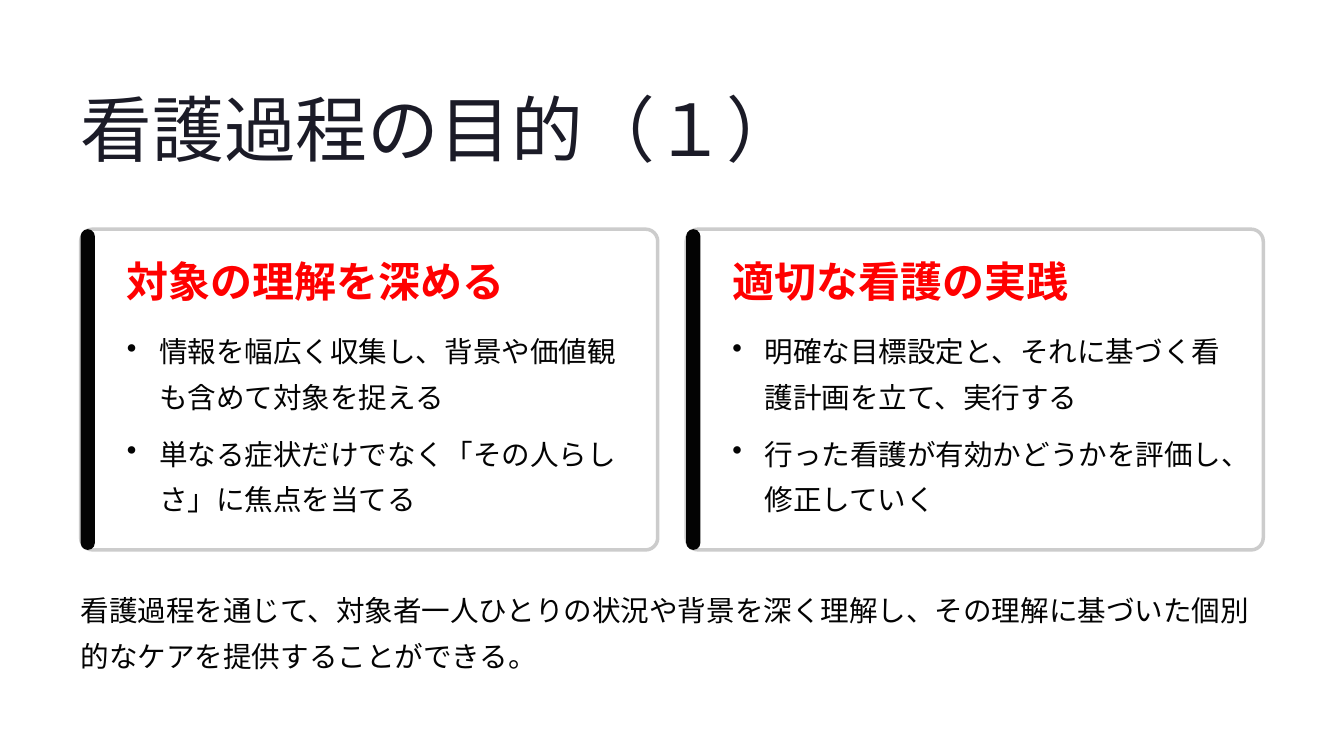
from lxml import etree
from pptx import Presentation
from pptx import util as u
from pptx.dml.color import RGBColor
from pptx.enum import lang, shapes, text
from pptx.oxml.ns import qn

COLORS = {"title": "1B1B27", "heading": "FF0000", "ink": "030303",
          "card": "FFFFFF", "border": "CCCCCC"}
FORMATS = {
    "title": {"size": u.Pt(61.5), "name": "Inter", "bold": False},
    "heading": {"size": u.Pt(36), "name": "Inter", "bold": True},
    "ink": {"size": u.Pt(24.5), "name": "Cabin", "bold": False},
}
LEADING = {"title": 77, "heading": 38.5, "ink": 39}
INDENT = u.Cm(0.97)
CARDS = [
    ("対象の理解を深める",
     ["情報を幅広く収集し、背景や価値観も含めて対象を捉える",
      "単なる症状だけでなく「その人らしさ」に焦点を当てる"]),
    ("適切な看護の実践",
     ["明確な目標設定と、それに基づく看護計画を立て、実行する",
      "行った看護が有効かどうかを評価し、修正していく"]),
]
SUMMARY = ("看護過程を通じて、対象者一人ひとりの状況や背景を深く理解し、"
           "その理解に基づいた個別的なケアを提供することができる。")


def add_words(slide, box, words, role, wrap=True):
    """Place one paragraph in the box and return the paragraph."""
    frame = slide.shapes.add_textbox(*map(u.Cm, box)).text_frame
    margins = dict.fromkeys(
        ("margin_left", "margin_top", "margin_right", "margin_bottom"), 0)
    settings = {**margins, "word_wrap": wrap, "auto_size": text.MSO_AUTO_SIZE.NONE}
    for key, value in settings.items():
        setattr(frame, key, value)
    paragraph = frame.paragraphs[0]
    paragraph.line_spacing = u.Pt(LEADING[role])
    run = paragraph.add_run()
    run.text = words
    japanese = {"language_id": lang.MSO_LANGUAGE_ID.JAPANESE}
    for key, value in {**FORMATS[role], **japanese}.items():
        setattr(run.font, key, value)
    run.font.color.rgb = RGBColor.from_string(COLORS[role])
    return paragraph


def add_bullet(slide, box, words):
    """Place one bulleted paragraph with a hanging indent."""
    properties = add_words(slide, box, words, "ink")._p.get_or_add_pPr()
    properties.set("marL", str(INDENT))
    properties.set("indent", str(-INDENT))
    etree.SubElement(properties, qn("a:buChar"), char="•")


def add_panel(slide, box, color, rounding):
    """Place a borderless rounded rectangle."""
    panel = slide.shapes.add_shape(
        shapes.MSO_SHAPE.ROUNDED_RECTANGLE, *map(u.Cm, box))
    panel.shadow.inherit = False
    panel.adjustments[0] = rounding
    panel.fill.solid()
    panel.fill.fore_color.rgb = RGBColor.from_string(COLORS[color])
    panel.line.fill.background()
    return panel


def add_card(slide, box, heading, bullets):
    """Place a bordered card with its side bar, heading and bullets."""
    left, top, width, height = box
    card = add_panel(slide, box, "card", 0.038)
    card.line.color.rgb = RGBColor.from_string(COLORS["border"])
    card.line.width = u.Pt(3)
    tint = card.fill._xPr.find(qn("a:solidFill"))[0]
    etree.SubElement(tint, qn("a:alpha"), val="95000")
    add_panel(slide, (left, top, 0.43, height), "ink", 0.86)
    inner = left + 1.4
    add_words(slide, (inner, top + 0.97, 10.87, 1.35), heading, "heading", False)
    for row, bullet in enumerate(bullets):
        add_bullet(slide, (inner, top + 2.84 + row * 3.1, width - 2.36, 2.79), bullet)


def add_purpose_slide(deck, box):
    """Lay out the title, the two cards and the summary in the box."""
    slide = deck.slides.add_slide(deck.slide_layouts[6])
    left, top, width, height = box
    gap = 0.86
    card_width = (width - gap) / 2
    add_words(slide, (left, top, 21.74, 2.72), "看護過程の目的（１）", "title", False)
    for column, (heading, bullets) in enumerate(CARDS):
        card_left = left + column * (card_width + gap)
        add_card(slide, (card_left, top + 4.47, card_width, 9.7), heading, bullets)
    add_words(slide, (left, top + height - 2.79, width, 2.79), SUMMARY, "ink")


def main():
    """Build and save the deck."""
    deck = Presentation()
    deck.slide_width, deck.slide_height = u.Cm(40.64), u.Cm(22.86)
    add_purpose_slide(deck, (2.44, 2.46, 35.76, 17.93))
    deck.save("out.pptx")


if __name__ == "__main__":
    main()
